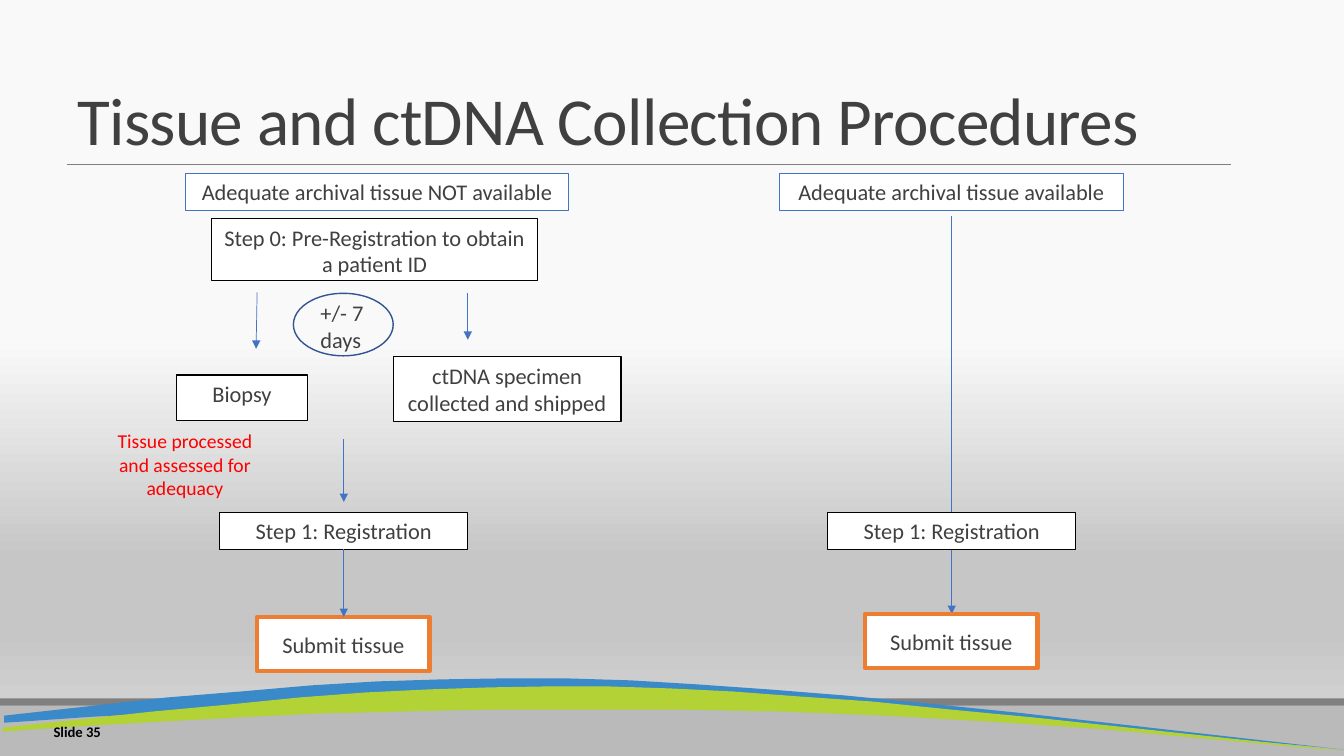
import pptx
import pptx.dml.color
import pptx.enum.shapes
import pptx.enum.text
import pptx.oxml
import pptx.oxml.ns
import pptx.util

Inches = pptx.util.Inches
Pt = pptx.util.Pt
SHAPE = pptx.enum.shapes.MSO_SHAPE
ALIGN = pptx.enum.text.PP_ALIGN
ANCHOR = pptx.enum.text.MSO_ANCHOR

GREY, BLACK, WHITE = "404040", "000000", "FFFFFF"
BLUE, ORANGE, RED = "4472C4", "ED7D31", "FF0000"
BACKDROP = [(45, "F9F9F9"), (74, "C6C6C6"), (83, "C6C6C6"), (100, "D9D9D9")]

BLUE_WAVE = [
    (5, 6.73), (4.38, 6.74), (3.74, 6.76), (3.08, 6.8), (2.39, 6.86), (1.65, 6.92),
    (0.85, 7.01), (0.04, 7.1), (0.04, 7.17), (0.2, 7.16), (0.93, 7.11), (1.71, 7.07),
    (2.56, 7.03), (3.45, 7.01), (4.39, 6.99), (5.37, 6.98), (6.39, 6.99), (7.44, 7.01),
    (8.52, 7.05), (9.62, 7.11), (10.74, 7.2), (13.06, 7.41), (13.35, 7.44),
    (10.09, 7.07), (9.2, 6.98), (8.38, 6.9), (7.63, 6.84), (6.92, 6.79),
    (6.26, 6.75), (5.62, 6.73)]
GREEN_WAVE = [
    (5.44, 6.81), (4.85, 6.82), (4.25, 6.84), (3.63, 6.87), (2.97, 6.92), (2.27, 6.99),
    (1.51, 7.06), (0.68, 7.15), (0.03, 7.22), (0.03, 7.26), (0.27, 7.24), (0.9, 7.2),
    (1.58, 7.16), (2.33, 7.12), (3.12, 7.08), (3.97, 7.06), (4.86, 7.04), (5.79, 7.04),
    (6.76, 7.04), (7.76, 7.06), (8.78, 7.1), (9.82, 7.16), (10.88, 7.23), (13.08, 7.43),
    (13.36, 7.45), (10.27, 7.12), (9.43, 7.04), (8.65, 6.96), (7.93, 6.91),
    (7.26, 6.86), (6.64, 6.83), (6.03, 6.81)]


def rgb(value):
    return pptx.dml.color.RGBColor.from_string(value)


def apply(target, values):
    for name, value in values.items():
        setattr(target, name, value)


def drawingml(tag, content=""):
    return pptx.oxml.parse_xml(
        f'<a:{tag} {pptx.oxml.ns.nsdecls("a")}>{content}</a:{tag}>')


def paint_background(slide):
    fill = slide.background.fill
    fill.gradient()
    fill.gradient_angle = 270
    stops = "".join(
        f'<a:gs pos="{percent * 1000}"><a:srgbClr val="{color}"/></a:gs>'
        for percent, color in BACKDROP)
    gradient = slide.background._cSld.find(".//" + pptx.oxml.ns.qn("a:gradFill"))
    old_stops = gradient.find(pptx.oxml.ns.qn("a:gsLst"))
    gradient.replace(old_stops, drawingml("gsLst", stops))


def style(shape, fill=None, outline=None, weight=0.75):
    shape.shadow.inherit = False
    if fill:
        shape.fill.solid()
        shape.fill.fore_color.rgb = rgb(fill)
    else:
        shape.fill.background()
    if outline:
        shape.line.color.rgb = rgb(outline)
        shape.line.width = Pt(weight)
    else:
        shape.line.fill.background()


def write(shape, wording, size=16, color=GREY, bold=False, align=ALIGN.CENTER,
          anchor=ANCHOR.TOP, margin=0.05):
    frame = shape.text_frame
    apply(frame, {"word_wrap": True, "vertical_anchor": anchor,
                  "margin_left": Inches(0.1), "margin_right": Inches(0.1),
                  "margin_top": Inches(margin), "margin_bottom": Inches(margin)})
    paragraph = frame.paragraphs[0]
    paragraph.alignment = align
    run = paragraph.add_run()
    run.text = wording
    apply(run.font, {"name": "Calibri", "size": Pt(size), "bold": bold})
    run.font.color.rgb = rgb(color)
    return run


def add_shape(slide, kind, box, **look):
    shape = slide.shapes.add_shape(kind, *map(Inches, box))
    style(shape, **look)
    return shape


def add_box(slide, box, wording, outline=BLACK, weight=0.75, **text):
    shape = add_shape(slide, SHAPE.RECTANGLE, box,
                      fill=WHITE, outline=outline, weight=weight)
    write(shape, wording, **text)


def add_label(slide, box, wording, **text):
    return write(slide.shapes.add_textbox(*map(Inches, box)), wording, **text)


def add_line(slide, start, end, color=BLUE, arrow=True):
    line = slide.shapes.add_connector(
        pptx.enum.shapes.MSO_CONNECTOR.STRAIGHT, *map(Inches, start + end))
    line.line.color.rgb = rgb(color)
    line.line.width = Pt(0.5)
    if arrow:
        head = drawingml("tailEnd")
        head.set("type", "triangle")
        line.line._get_or_add_ln().append(head)
    line._element.spPr.append(drawingml("effectLst"))


def add_wave(slide, points, color):
    corners = [(Inches(x), Inches(y)) for x, y in points]
    builder = slide.shapes.build_freeform(*corners[0])
    builder.add_line_segments(corners[1:], close=True)
    style(builder.convert_to_shape(), fill=color)


def add_final_steps(slide, center, submit_top):
    add_box(slide, (center - 1.23, 5.08, 2.46, 0.37), "Step 1: Registration")
    add_box(slide, (center - 0.86, submit_top, 1.71, 0.54), "Submit tissue",
            outline=ORANGE, weight=3, anchor=ANCHOR.MIDDLE, margin=0.1)


def add_frame(slide):
    paint_background(slide)
    add_shape(slide, SHAPE.RECTANGLE, (0, 7, 13.33, 0.5), fill="BABABA")
    add_shape(slide, SHAPE.RECTANGLE, (0, 6.93, 13.33, 0.07), fill="808080")
    add_line(slide, (0.66, 1.63), (12.21, 1.63), color="808080", arrow=False)
    add_wave(slide, BLUE_WAVE, "3A89C9")
    add_wave(slide, GREEN_WAVE, "B2D235")
    title = add_label(slide, (0.67, 0.04, 11.53, 1.59),
                      "Tissue and ctDNA Collection Procedures", size=48,
                      align=ALIGN.LEFT, anchor=ANCHOR.BOTTOM)
    title._r.get_or_add_rPr().set("spc", "-50")
    title._parent.line_spacing = 0.85
    add_label(slide, (0.07, 7.06, 1.03, 0.4), "Slide 35", size=10.5, color=BLACK,
              bold=True, align=ALIGN.RIGHT, anchor=ANCHOR.MIDDLE)


def add_biopsy_branch(slide):
    add_box(slide, (1.84, 1.72, 3.8, 0.37),
            "Adequate archival tissue NOT available", outline=BLUE)
    add_box(slide, (2.1, 2.17, 3.23, 0.61),
            "Step 0: Pre-Registration to obtain a patient ID")
    add_box(slide, (1.75, 3.72, 1.3, 0.45), "Biopsy")
    add_box(slide, (3.9, 3.54, 2.26, 0.64), "ctDNA specimen collected and shipped")
    add_label(slide, (0.93, 4.21, 1.81, 0.81),
              "Tissue processed and assessed for adequacy", size=14, color=RED)
    add_label(slide, (3.08, 2.92, 0.82, 0.64), "+/- 7 days", align=ALIGN.LEFT)
    add_shape(slide, SHAPE.OVAL, (2.91, 2.91, 0.99, 0.62), outline="325491", weight=1)
    add_final_steps(slide, 3.41, 6.12)
    for start, end in [((2.55, 2.9), (2.54, 3.46)), ((4.64, 2.91), (4.64, 3.37)),
                       ((3.41, 4.36), (3.41, 4.98)), ((3.41, 5.45), (3.41, 6.12))]:
        add_line(slide, start, end)


def add_archival_branch(slide):
    add_line(slide, (9.44, 2.14), (9.44, 6.09))
    add_box(slide, (7.73, 1.72, 3.41, 0.37),
            "Adequate archival tissue available", outline=BLUE)
    add_final_steps(slide, 9.44, 6.09)


def main():
    deck = pptx.Presentation()
    apply(deck, {"slide_width": Inches(13.33), "slide_height": Inches(7.5)})
    slide = deck.slides.add_slide(deck.slide_layouts[6])
    add_frame(slide)
    add_biopsy_branch(slide)
    add_archival_branch(slide)
    deck.save("out.pptx")


if __name__ == "__main__":
    main()
